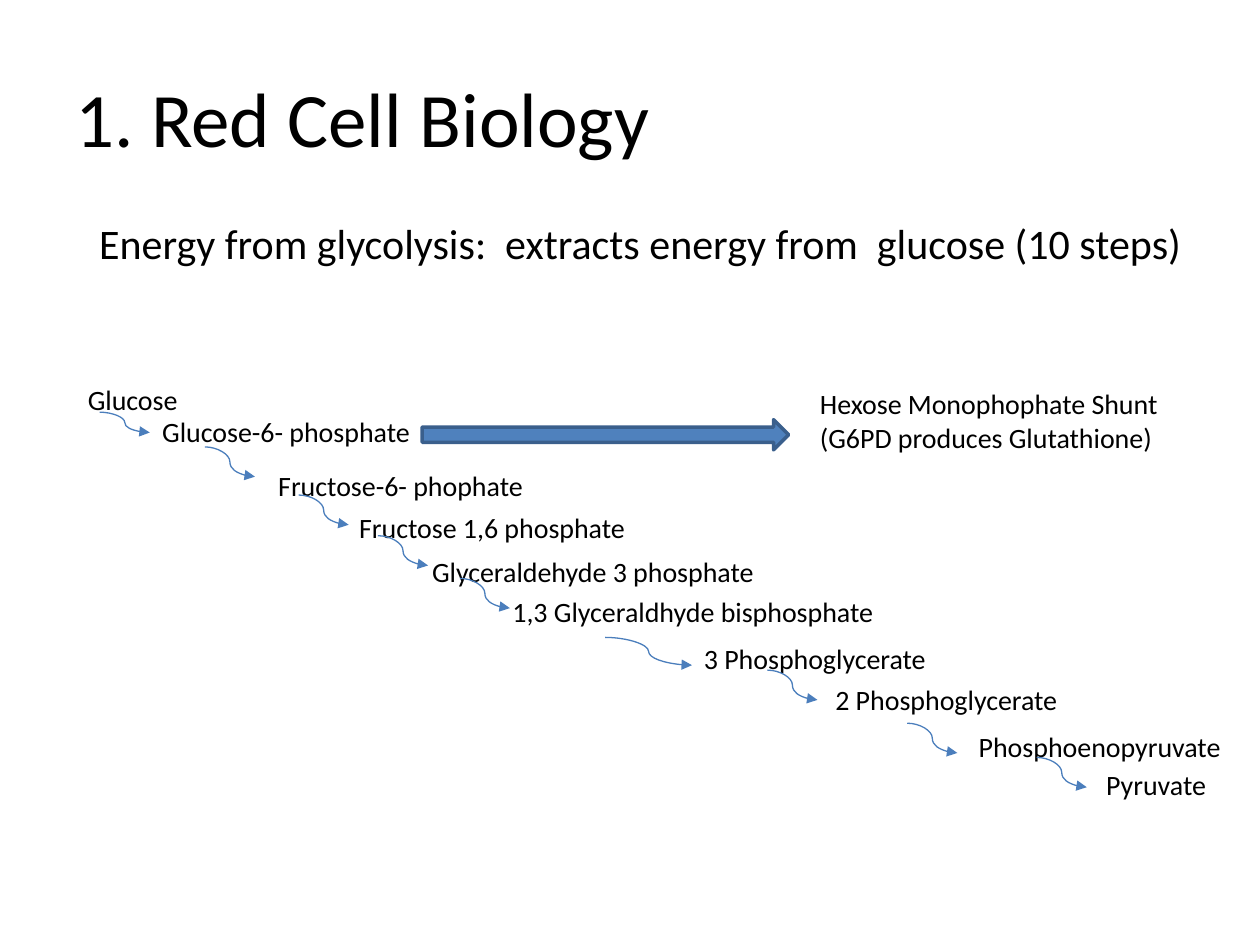
from lxml.etree import SubElement
from pptx import Presentation
from pptx.dml.color import RGBColor
from pptx.enum.shapes import MSO_CONNECTOR, MSO_SHAPE
from pptx.enum.text import MSO_ANCHOR, MSO_AUTO_SIZE
from pptx.oxml.ns import qn
from pptx.util import Cm, Pt

BLACK = RGBColor(0x00, 0x00, 0x00)
BLUE = RGBColor(0x4F, 0x81, 0xBD)
EDGE = RGBColor(0x3A, 0x5F, 0x8C)
CURVE = RGBColor(0x4B, 0x7E, 0xBC)

TITLE = "1. Red Cell Biology"
LEAD = "Energy from glycolysis:  extracts energy from  glucose (10 steps)"
SHUNT = "Hexose Monophophate Shunt (G6PD produces Glutathione)"
STEPS = [
    ("Glucose", 1.52, 7.59, 2.92),
    ("Glucose-6- phosphate", 3.02, 8.23, 6.6),
    ("Fructose-6- phophate", 5.36, 9.32, 5.84),
    ("Fructose 1,6 phosphate", 6.99, 10.16, 6.88),
    ("Glyceraldehyde 3 phosphate", 8.46, 11.05, 8.89),
    ("1,3 Glyceraldhyde bisphosphate", 10.08, 11.86, 10.03),
    ("3 Phosphoglycerate", 13.94, 12.8, 5.56),
    ("2 Phosphoglycerate", 16.59, 13.64, 5.56),
    ("Phosphoenopyruvate", 19.48, 14.58, 5.9),
    ("Pyruvate", 22.05, 15.34, 2.92),
]
SPAN = (1.01, 0.6)
CURVES = [
    (2.01, 8.31, 1.01, 0.41),
    (4.13, 9.01, *SPAN),
    (6.02, 9.98, *SPAN),
    (7.62, 10.8, *SPAN),
    (9.27, 11.66, *SPAN),
    (12.2, 12.85, 1.75, 0.56),
    (15.47, 13.51, *SPAN),
    (18.29, 14.58, *SPAN),
    (20.9, 15.27, *SPAN),
]


def add_text(slide, text, left, top, width, height, size=16):
    box = slide.shapes.add_textbox(Cm(left), Cm(top), Cm(width), Cm(height))
    frame = box.text_frame
    frame.text = text
    frame.word_wrap = True
    font = frame.paragraphs[0].runs[0].font
    font.name = "Calibri"
    font.size = Pt(size)
    font.color.rgb = BLACK
    return frame


def add_curve(slide, left, top, width, height):
    line = slide.shapes.add_connector(
        MSO_CONNECTOR.CURVE, Cm(left), Cm(top), Cm(left + width), Cm(top + height)
    )
    line.line.color.rgb = CURVE
    line.line.width = Pt(0.75)
    SubElement(line.line._get_or_add_ln(), qn("a:tailEnd"), type="triangle")
    SubElement(line._element.spPr, qn("a:effectLst"))


def add_arrow(slide):
    arrow = slide.shapes.add_shape(
        MSO_SHAPE.RIGHT_ARROW, Cm(8.51), Cm(8.46), Cm(7.39), Cm(0.61)
    )
    arrow.shadow.inherit = False
    arrow.fill.solid()
    arrow.fill.fore_color.rgb = BLUE
    arrow.line.color.rgb = EDGE
    arrow.line.width = Pt(2)


def main():
    deck = Presentation()
    deck.slide_width, deck.slide_height = Cm(25.4), Cm(19.05)
    slide = deck.slides.add_slide(deck.slide_layouts[6])

    title = add_text(slide, TITLE, 1.27, 0.76, 22.86, 3.18, 44)
    title.vertical_anchor = MSO_ANCHOR.MIDDLE
    add_text(slide, LEAD, 1.75, 4.27, 22.61, 1.02, 24)

    for name, left, top, width in STEPS:
        step = add_text(slide, name, left, top, width, 0.94)
        step.auto_size = MSO_AUTO_SIZE.SHAPE_TO_FIT_TEXT
    for place in CURVES:
        add_curve(slide, *place)

    add_arrow(slide)
    shunt = add_text(slide, SHUNT, 16.28, 7.67, 8.25, 1.63)
    shunt.auto_size = MSO_AUTO_SIZE.SHAPE_TO_FIT_TEXT
    deck.save("out.pptx")


if __name__ == "__main__":
    main()
